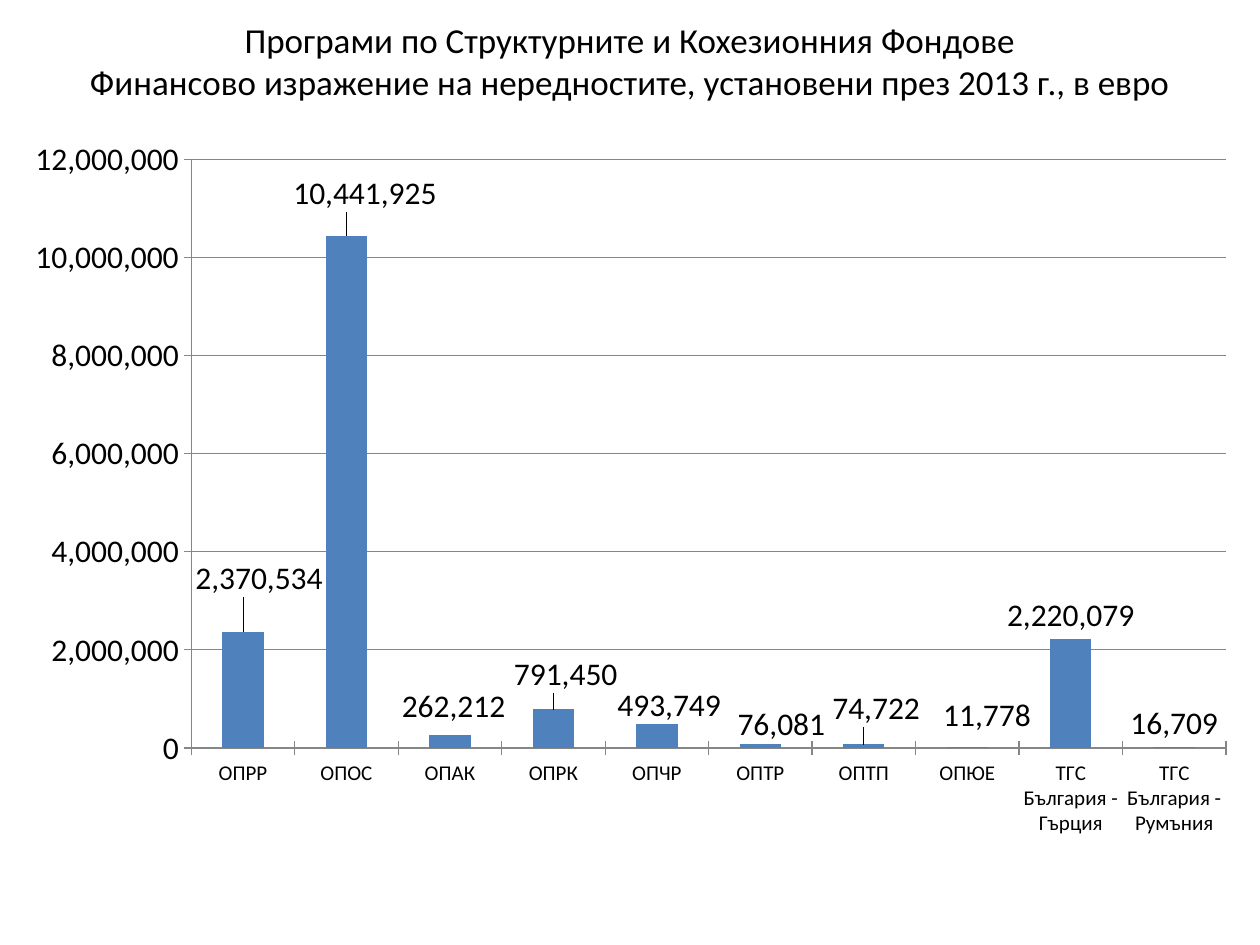
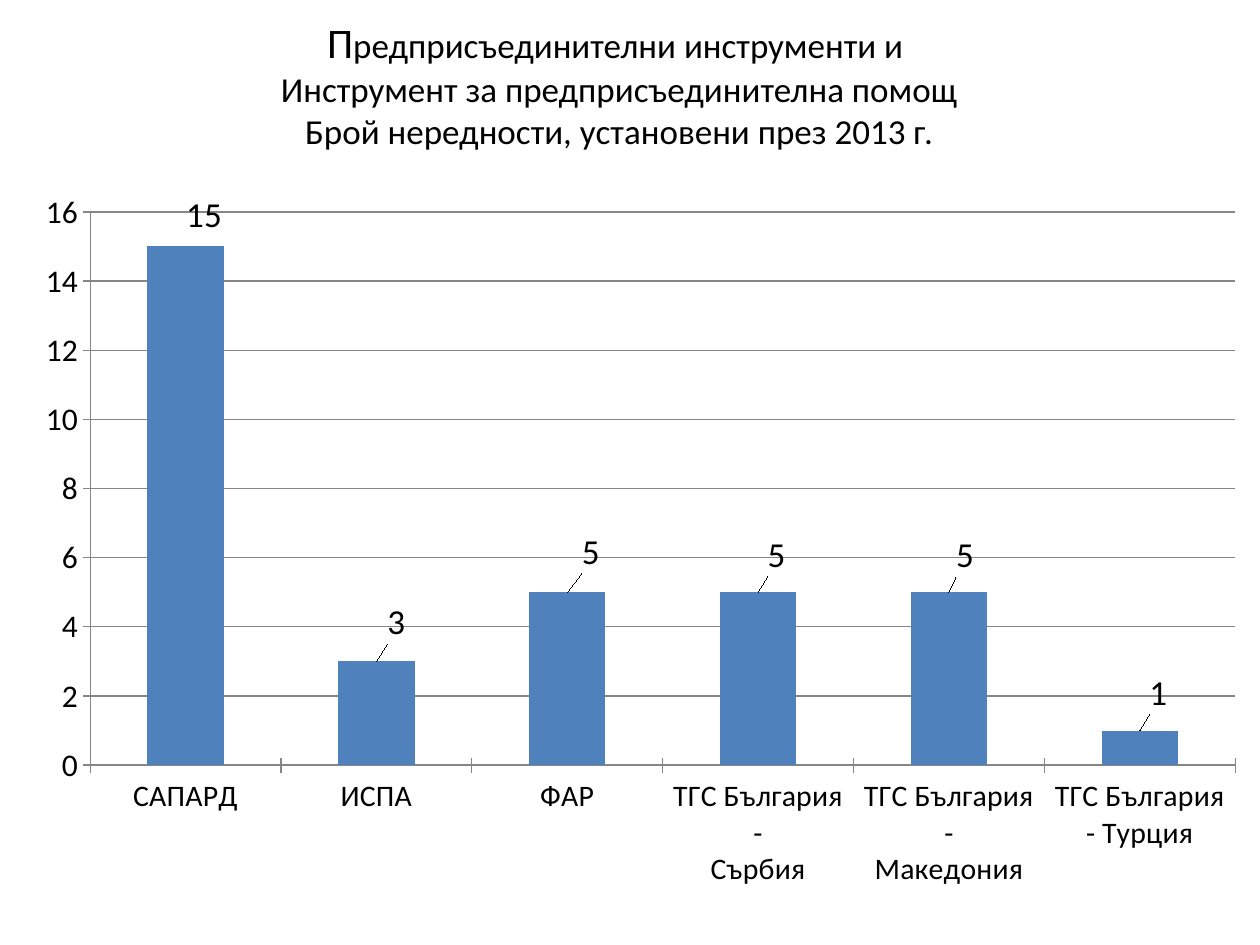
from lxml.etree import SubElement
from pptx import Presentation
from pptx.chart.data import CategoryChartData as Data
from pptx.dml.color import RGBColor
from pptx.enum.chart import XL_CHART_TYPE as Kind, XL_LABEL_POSITION as Spot, XL_TICK_MARK as Tick
from pptx.enum.text import MSO_ANCHOR as Anchor, MSO_AUTO_SIZE as Fit, PP_ALIGN as Align
from pptx.oxml.ns import qn
from pptx.util import Cm, Pt

FONT, TEXT, BAR, GRID = "Calibri", "000000", "4F81BD", "868686"
TITLE_SIZE, CHART_SIZE = 20, 18
CHART_W, CHART_H = 24.98, 14.6

# Boxes are in cm; "plot" (left, top, width, height) and the label shifts
# in each row of "bars" are percentages of the chart's width and height.
SLIDES = [
    {
        "title": ["Програми по Структурните и Кохезионния Фондове",
                  "Финансово изражение на нередностите, установени през 2013 г., в евро"],
        "initial": 20,
        "title_box": (0.21, 0, 24.98, 2.42),
        "chart_at": (0.21, 2.54),
        "plot": (14.6, 4.6, 83.5, 81.3),
        "format": "#,##0", "top": 12_000_000, "step": 2_000_000,
        "cat_size": 12, "label_size": 18,
        "bars": [
            ("ОПРР", 2370534, 1.3, -4),
            ("ОПОС", 10441925, 1.5, -2.6),
            ("ОПАК", 262212, 0.3, -0.7),
            ("ОПРК", 791450, 1, -1.5),
            ("ОПЧР", 493749, 1, 0.7),
            ("ОПТР", 76081, 1.7, 0.6),
            ("ОПТП", 74722, 1, -1.7),
            ("ОПЮЕ", 11778, 1.6, -1.1),
            ("ТГС България - Гърция", 2220079, 0, 0),
            ("ТГС България - Румъния", 16709, 0, 0),
        ],
    },
    {
        "title": ["Предприсъединителни инструменти и ",
                  "Инструмент за предприсъединителна помощ",
                  "Брой нередности, установени през 2013 г."],
        "initial": 24,
        "title_box": (0.21, 0.21, 24.55, 2.96),
        "chart_at": (0.42, 3.6),
        "plot": (5.6, 4.6, 92.4, 76.4),
        "format": "General", "top": 16, "step": 2,
        "cat_size": 17, "label_size": 20,
        "bars": [
            ("САПАРД", 15, 1.5, -0.7),
            ("ИСПА", 3, 1.6, -1.7),
            ("ФАР", 5, 1.9, -1.9),
            ("ТГС България -\nСърбия", 5, 1.5, -1.5),
            ("ТГС България -\nМакедония", 5, 1.3, -1.4),
            ("ТГС България - Турция", 1, 1.5, -1.5),
        ],
    },
]


def paint(color, code):
    color.rgb = RGBColor.from_string(code)


def style(font, size):
    font.name, font.size, font.bold = FONT, Pt(size), False
    paint(font.color, TEXT)


def place(parent, index, **parts):
    """Give a chart part a manual layout, in percent of the chart."""
    for old in parent.findall(qn("c:layout")):
        parent.remove(old)
    layout = SubElement(parent, qn("c:layout"))
    parent.insert(index, layout)
    manual = SubElement(layout, qn("c:manualLayout"))
    for name, value in parts.items():
        text = value if isinstance(value, str) else f"{value / 100:.3f}"
        SubElement(manual, qn(f"c:{name}")).set("val", text)


def add_title(slide, page):
    box = slide.shapes.title
    box.left, box.top, box.width, box.height = map(Cm, page["title_box"])
    frame = box.text_frame
    frame.auto_size, frame.vertical_anchor = Fit.NONE, Anchor.MIDDLE
    para = frame.paragraphs[0]
    para.alignment = Align.CENTER
    style(para.font, TITLE_SIZE)
    first, *rest = page["title"]
    initial = para.add_run()
    initial.text = first[0]
    initial.font.size = Pt(page["initial"])
    para.add_run().text = first[1:]
    for line in rest:
        para.add_line_break()
        para.add_run().text = line


def style_axes(chart, page):
    cats, vals = chart.category_axis, chart.value_axis
    for axis, size in (cats, page["cat_size"]), (vals, CHART_SIZE):
        axis.major_tick_mark = Tick.CROSS
        paint(axis.format.line.color, GRID)
        style(axis.tick_labels.font, size)
    vals.minimum_scale, vals.maximum_scale = 0, page["top"]
    vals.major_unit = page["step"]
    vals.tick_labels.number_format = page["format"]
    vals.tick_labels.number_format_is_linked = False
    vals.has_major_gridlines = True
    paint(vals.major_gridlines.format.line.color, GRID)


def add_labels(plot, series, page):
    plot.has_data_labels = True
    labels = plot.data_labels
    labels.show_value, labels.position = True, Spot.OUTSIDE_END
    labels.number_format = page["format"]
    labels.number_format_is_linked = False
    style(labels.font, page["label_size"])
    for i, (_, _, dx, dy) in enumerate(page["bars"]):
        label = series.points[i].data_label
        style(label.font, page["label_size"])
        label.position = Spot.OUTSIDE_END
        if dx or dy:
            item = series.data_labels._element.findall(qn("c:dLbl"))[i]
            place(item, 1, x=dx, y=dy)
    own = series.data_labels
    own.show_value, own.position = True, Spot.OUTSIDE_END
    style(own.font, page["label_size"])


def add_bars(slide, page):
    data = Data(number_format=page["format"])
    data.categories = [bar[0] for bar in page["bars"]]
    data.add_series("Series 1", [bar[1] for bar in page["bars"]])
    box = map(Cm, (*page["chart_at"], CHART_W, CHART_H))
    chart = slide.shapes.add_chart(Kind.COLUMN_CLUSTERED, *box, data).chart
    chart.has_title = chart.has_legend = False
    style(chart.font, CHART_SIZE)
    style_axes(chart, page)
    plot = chart.plots[0]
    plot.gap_width, plot.vary_by_categories = 150, False
    series = plot.series[0]
    series.format.fill.solid()
    paint(series.format.fill.fore_color, BAR)
    add_labels(plot, series, page)
    area = chart._chartSpace.find(".//" + qn("c:plotArea"))
    x, y, w, h = page["plot"]
    place(area, 0, layoutTarget="inner", xMode="edge", yMode="edge", x=x, y=y, w=w, h=h)


def main():
    prs = Presentation()
    prs.slide_width, prs.slide_height = Cm(25.4), Cm(19.05)
    heading = prs.slide_master.element.find(".//" + qn("p:titleStyle"))
    heading.find(".//" + qn("a:defRPr")).set("sz", str(TITLE_SIZE * 100))
    for page in SLIDES:
        slide = prs.slides.add_slide(prs.slide_layouts[5])
        add_title(slide, page)
        add_bars(slide, page)
    prs.save("out.pptx")


if __name__ == "__main__":
    main()
